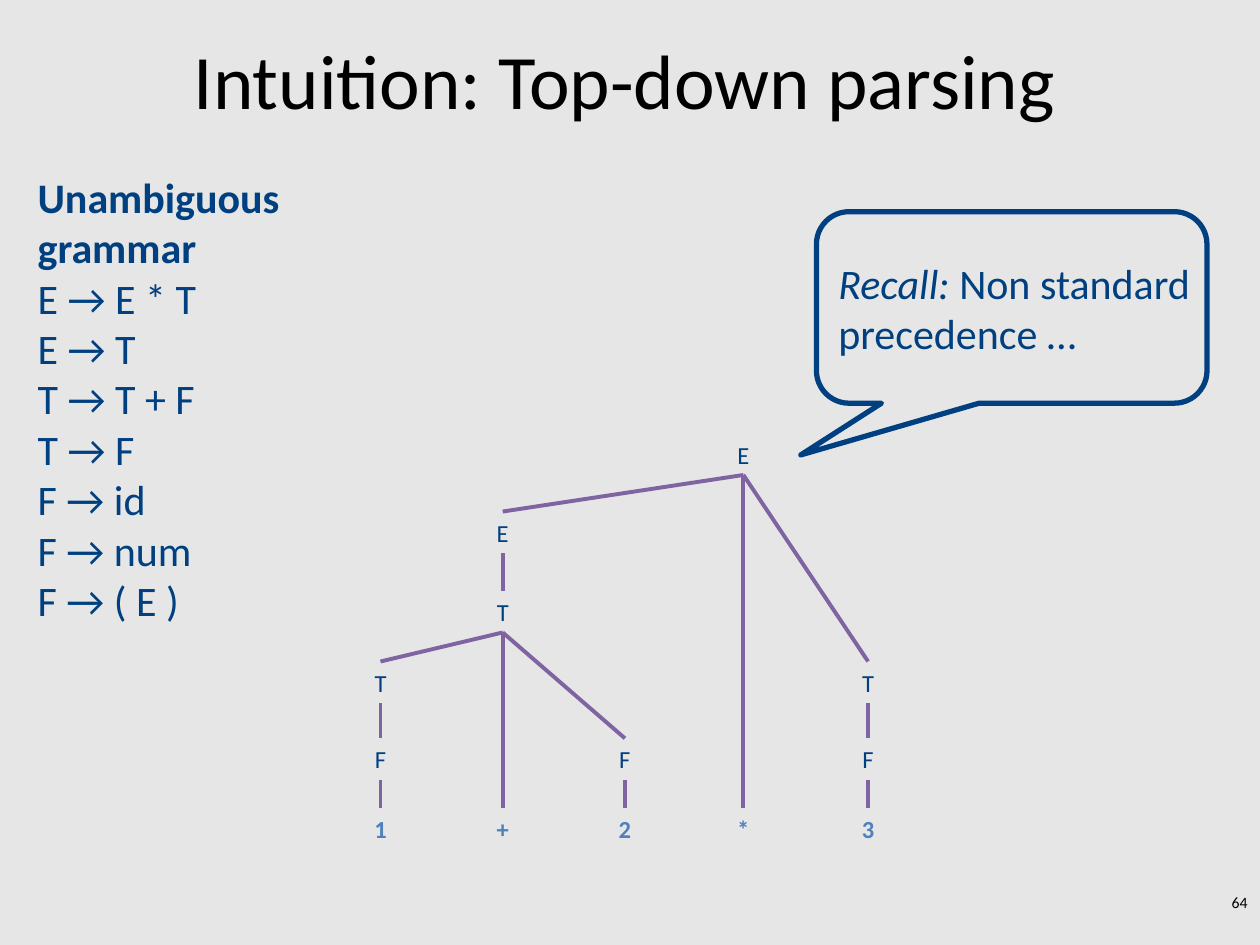
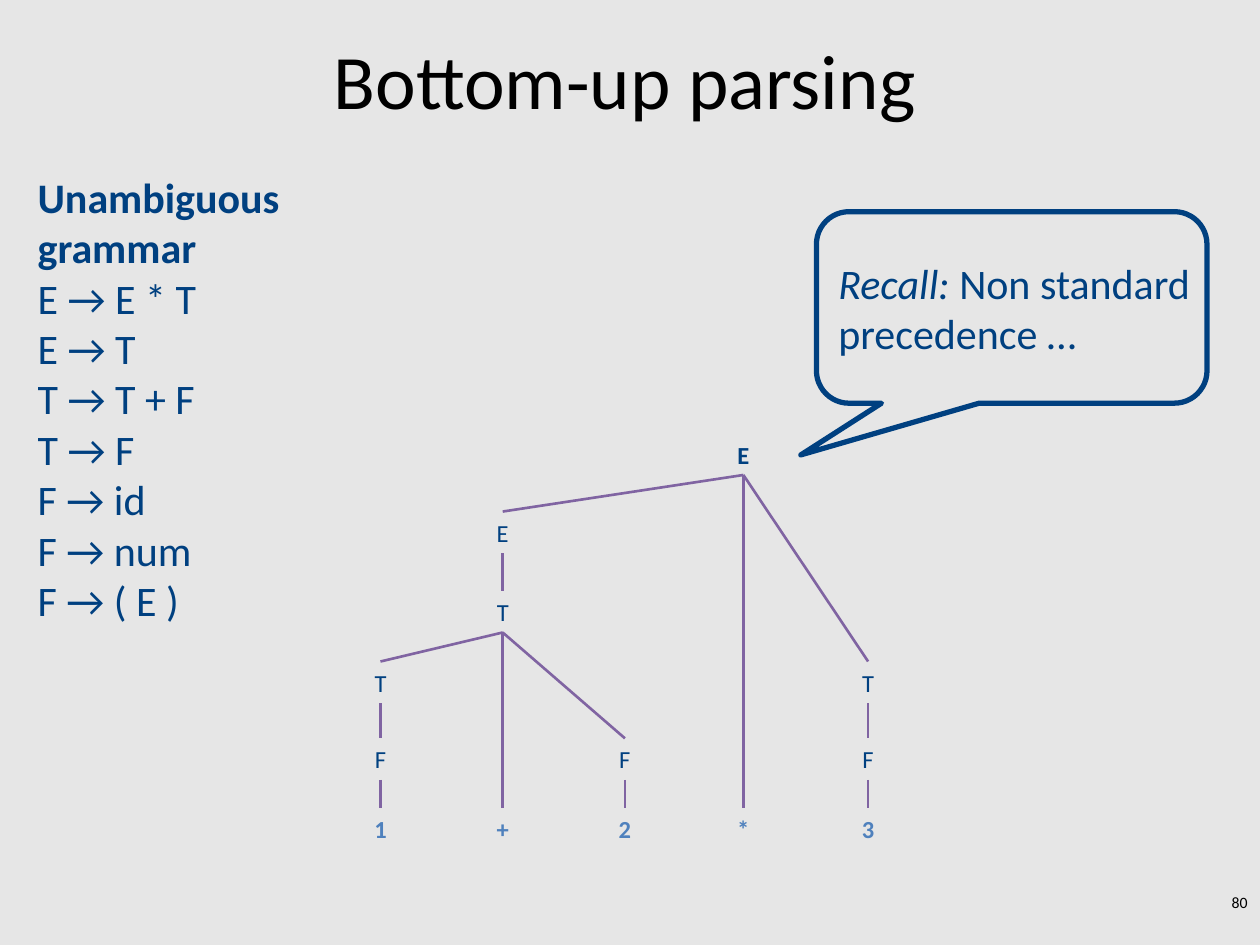
from lxml.etree import SubElement
from pptx import Presentation
from pptx.dml.color import RGBColor
from pptx.enum.shapes import MSO_CONNECTOR, MSO_SHAPE
from pptx.enum.text import MSO_ANCHOR, MSO_AUTO_SIZE, PP_ALIGN
from pptx.oxml.ns import qn
from pptx.util import Inches, Pt

FONT = "Calibri"
GREY = RGBColor(0xE6, 0xE6, 0xE6)
BLACK = RGBColor(0x00, 0x00, 0x00)
NAVY = RGBColor(0x00, 0x40, 0x80)
BLUE = RGBColor(0x4F, 0x81, 0xBD)
PURPLE = RGBColor(0x80, 0x64, 0xA2)

SLIDES = [
    ("Intuition: Top-down parsing", "64", 2.25, False),
    ("Bottom-up parsing", "80", 1.5, True),
]
GRAMMAR_HEADING = ["Unambiguous", "grammar"]
RULES = ["E → E * T", "E → T", "T → T + F", "T → F", "F → id", "F → num", "F → ( E )"]

COLUMNS = [3.02, 3.99, 4.96, 5.9, 6.89]
NODE_WIDTH, NODE_HEIGHT = 0.3, 0.33
TOKEN_TOP = 6.41
NODES = {
    "root": ("E", 3, 3.44),
    "sum expr": ("E", 1, 4.06),
    "sum": ("T", 1, 4.69),
    "left term": ("T", 0, 5.25),
    "right term": ("T", 4, 5.25),
    "left factor": ("F", 0, 5.86),
    "middle factor": ("F", 2, 5.86),
    "right factor": ("F", 4, 5.86),
    "one": ("1", 0, TOKEN_TOP),
    "plus": ("+", 1, TOKEN_TOP),
    "two": ("2", 2, TOKEN_TOP),
    "times": ("*", 3, TOKEN_TOP),
    "three": ("3", 4, TOKEN_TOP),
}
CHILDREN = {
    "root": ["sum expr", "times", "right term"],
    "sum expr": ["sum"],
    "sum": ["left term", "plus", "middle factor"],
    "left term": ["left factor"],
    "right term": ["right factor"],
    "left factor": ["one"],
    "middle factor": ["two"],
    "right factor": ["three"],
}


def add_run(paragraph, text, size, color, bold=False, italic=False):
    run = paragraph.add_run()
    run.text = text
    run.font.name = FONT
    run.font.size = Pt(size)
    run.font.color.rgb = color
    run.font.bold = bold
    run.font.italic = italic


def add_text_box(slide, left, top, width, height, align=PP_ALIGN.LEFT, wrap=True):
    box = slide.shapes.add_textbox(Inches(left), Inches(top), Inches(width), Inches(height))
    box.text_frame.word_wrap = wrap
    box.text_frame.paragraphs[0].alignment = align
    return box


prs = Presentation()
prs.slide_width = Inches(10)
prs.slide_height = Inches(7.5)
background = prs.slide_master.background.fill
background.solid()
background.fore_color.rgb = GREY

for heading, number, branch_width, bold_root in SLIDES:
    slide = prs.slides.add_slide(prs.slide_layouts[6])

    title = add_text_box(slide, 0.71, 0, 8.5, 1.25, PP_ALIGN.CENTER).text_frame
    title.vertical_anchor = MSO_ANCHOR.MIDDLE
    add_run(title.paragraphs[0], heading, 44, BLACK)

    grammar = add_text_box(slide, 0.2, 1.31, 2.99, 3.74).text_frame
    grammar.auto_size = MSO_AUTO_SIZE.SHAPE_TO_FIT_TEXT
    for index, line in enumerate(GRAMMAR_HEADING + RULES):
        paragraph = grammar.add_paragraph() if index else grammar.paragraphs[0]
        indent = paragraph._p.get_or_add_pPr()
        indent.set("marL", str(Inches(0.5)))
        indent.set("indent", str(Inches(-0.5)))
        add_run(paragraph, line, 24, NAVY, bold=line in GRAMMAR_HEADING)

    tree = {}
    for key, (symbol, column, top) in NODES.items():
        is_token = top == TOKEN_TOP
        node = add_text_box(slide, COLUMNS[column] - NODE_WIDTH / 2, top,
                            NODE_WIDTH, NODE_HEIGHT, PP_ALIGN.CENTER, wrap=False)
        node.text_frame.auto_size = MSO_AUTO_SIZE.SHAPE_TO_FIT_TEXT
        add_run(node.text_frame.paragraphs[0], symbol, 14, BLUE if is_token else NAVY,
                bold=is_token or (key == "root" and bold_root))
        tree[key] = node

    for parent, children in CHILDREN.items():
        for child in children:
            branch = slide.shapes.add_connector(MSO_CONNECTOR.STRAIGHT, 0, 0, 0, 0)
            branch.begin_connect(tree[parent], 2)
            branch.end_connect(tree[child], 0)
            branch.line.color.rgb = PURPLE
            branch.line.width = Pt(branch_width)
            SubElement(branch._element.spPr, qn("a:effectLst"))

    page = add_text_box(slide, 7.92, 7.04, 2.08, 0.3, PP_ALIGN.RIGHT)
    add_run(page.text_frame.paragraphs[0], number, 9, BLACK)

    callout = slide.shapes.add_shape(MSO_SHAPE.ROUNDED_RECTANGULAR_CALLOUT,
                                     Inches(6.48), Inches(1.68), Inches(3.1), Inches(1.52))
    for index, value in enumerate([-0.54, 0.77, 0.17]):
        callout.adjustments[index] = value
    callout.shadow.inherit = False
    callout.fill.background()
    callout.line.color.rgb = NAVY
    callout.line.width = Pt(3)
    remark = callout.text_frame
    remark.word_wrap = False
    remark.vertical_anchor = MSO_ANCHOR.MIDDLE
    first, second = remark.paragraphs[0], remark.add_paragraph()
    first.alignment = second.alignment = PP_ALIGN.LEFT
    add_run(first, "Recall:", 24, NAVY, italic=True)
    add_run(first, " Non standard", 24, NAVY)
    add_run(second, "precedence …", 24, NAVY)

prs.save("out.pptx")
